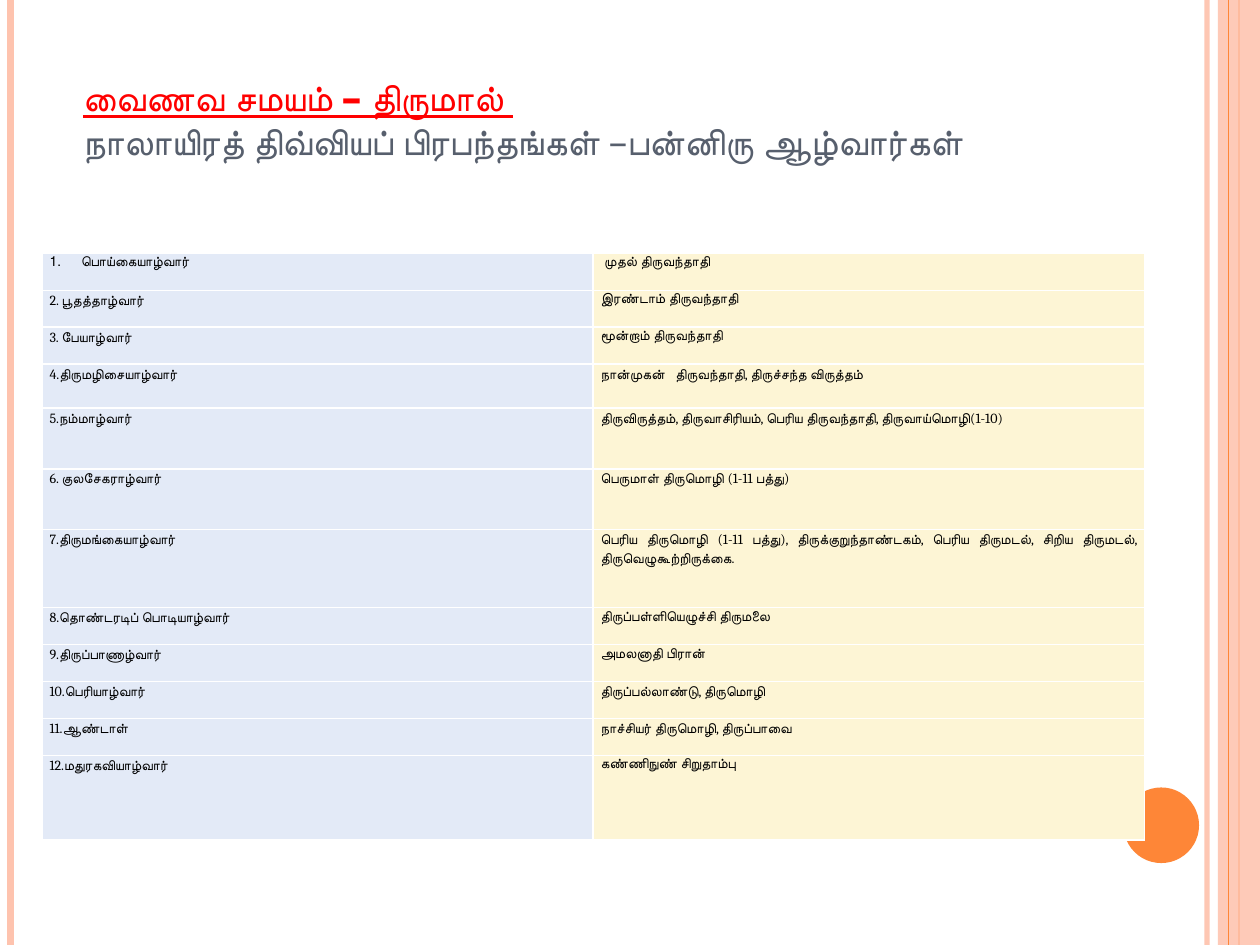
from pptx import Presentation
from pptx import util as u
from pptx.dml.color import RGBColor
from pptx.enum import shapes, text
from pptx.oxml.ns import qn
from lxml import etree

Pt = u.Pt
WIDTH, HEIGHT = 720, 540
ORANGE, PEACH, WHITE = "FE8637", "FEC3AE", "FFFFFF"

TITLE = "வைணவ சமயம் – திருமால் "
SUBTITLE = "நாலாயிரத் திவ்வியப் பிரபந்தங்கள் –பன்னிரு ஆழ்வார்கள்"

# Poet, works, row height
ROWS = [
    ("பொய்கையாழ்வார்", " முதல் திருவந்தாதி", 21.1),
    ("2. பூதத்தாழ்வார்", "இரண்டாம் திருவந்தாதி", 21.1),
    ("3. பேயாழ்வார்", "மூன்றாம் திருவந்தாதி", 21.1),
    ("4.திருமழிசையாழ்வார்", "நான்முகன்   திருவந்தாதி, திருச்சந்த விருத்தம்", 25.2),
    ("5.நம்மாழ்வார்", "திருவிருத்தம், திருவாசிரியம், பெரிய திருவந்தாதி, திருவாய்மொழி(1-10)", 34.7),
    ("6. குலசேகராழ்வார்", "பெருமாள் திருமொழி (1-11 பத்து)", 34.7),
    ("7.திருமங்கையாழ்வார்",
     "பெரிய திருமொழி (1-11 பத்து), திருக்குறுந்தாண்டகம், பெரிய திருமடல், "
     "சிறிய திருமடல், திருவெழுகூற்றிருக்கை.", 44.6),
    ("8.தொண்டரடிப் பொடியாழ்வார்", "திருப்பள்ளியெழுச்சி திருமலை", 21.1),
    ("9.திருப்பாணாழ்வார்", "அமலனாதி பிரான்", 21.1),
    ("10.பெரியாழ்வார்", "திருப்பல்லாண்டு, திருமொழி", 21.1),
    ("11.ஆண்டாள்", "நாச்சியர் திருமொழி, திருப்பாவை", 21.1),
    ("12.மதுரகவியாழ்வார்", "கண்ணிநுண் சிறுதாம்பு", 48.3),
]
COLUMN_FILLS = ["E3EAF7", "FDF5D5"]
COLUMN_WIDTH = 315


def color(value):
    return RGBColor.from_string(value)


def set_alpha(part, percent):
    for fill in part._element.spPr.iter(qn("a:srgbClr")):
        etree.SubElement(fill, qn("a:alpha"), val=str(percent * 1000))


def add_stripe(page, x, stroke, weight, alpha=100):
    line = page.shapes.add_connector(
        shapes.MSO_CONNECTOR.STRAIGHT, Pt(x), Pt(0), Pt(x), Pt(HEIGHT))
    line.line.color.rgb = color(stroke)
    line.line.width = Pt(weight)
    if alpha < 100:
        set_alpha(line, alpha)
    etree.SubElement(line._element.spPr, qn("a:effectLst"))


def add_filled(page, kind, left, top, width, height, fill, alpha=100):
    shape = page.shapes.add_shape(kind, Pt(left), Pt(top), Pt(width), Pt(height))
    shape.shadow.inherit = False
    shape.fill.solid()
    shape.fill.fore_color.rgb = color(fill)
    shape.line.fill.background()
    if alpha < 100:
        set_alpha(shape, alpha)


def add_title(page):
    box = page.shapes.add_textbox(Pt(40.3), Pt(30.2), Pt(568.8), Pt(66.2))
    box.text_frame.word_wrap = True
    box.text_frame.vertical_anchor = text.MSO_ANCHOR.BOTTOM
    para = box.text_frame.paragraphs[0]
    for words, ink, strong in ((TITLE, "FF0000", True), (SUBTITLE, "575F6D", False)):
        if para.runs:
            para.add_line_break()
        span = para.add_run()
        span.text = words
        span.font.name = "DejaVu Sans Mono"
        span.font.size = Pt(21)
        span.font.bold = span.font.underline = strong
        span.font.color.rgb = color(ink)


def add_borders(cell):
    props = cell._tc.get_or_add_tcPr()
    for index, side in enumerate(("lnL", "lnR", "lnT", "lnB")):
        edge = etree.Element(qn("a:" + side), w=str(Pt(1)))
        fill = etree.SubElement(edge, qn("a:solidFill"))
        etree.SubElement(fill, qn("a:srgbClr"), val=WHITE)
        props.insert(index, edge)


def fill_cell(cell, words, fill):
    cell.margin_left = cell.margin_right = Pt(4.3)
    cell.margin_top = cell.margin_bottom = Pt(0)
    cell.fill.solid()
    cell.fill.fore_color.rgb = color(fill)
    add_borders(cell)
    para = cell.text_frame.paragraphs[0]
    para.text = words
    para.alignment = text.PP_ALIGN.JUSTIFY
    para.line_spacing = 1.15
    para.space_after = Pt(10)
    para.font.name = "Cambria"
    para.font.size = Pt(8)
    para.font.color.rgb = color("000000")
    return para


def number_paragraph(para):
    props = para._p.get_or_add_pPr()
    props.set("marL", str(Pt(18)))
    props.set("indent", str(-Pt(18)))
    bullet = etree.Element(qn("a:buAutoNum"), type="arabicPeriod")
    props.find(qn("a:defRPr")).addprevious(bullet)


def add_poets(page):
    total = sum(height for _, _, height in ROWS)
    table = page.shapes.add_table(
        len(ROWS), 2, Pt(24), Pt(144.8), Pt(2 * COLUMN_WIDTH), Pt(total)).table
    table.first_row = table.horz_banding = False
    for column in table.columns:
        column.width = Pt(COLUMN_WIDTH)
    for r, (poet, works, height) in enumerate(ROWS):
        table.rows[r].height = Pt(height)
        for c, words in enumerate((poet, works)):
            para = fill_cell(table.cell(r, c), words, COLUMN_FILLS[c])
            if r == c == 0:
                number_paragraph(para)


def main():
    deck = Presentation()
    deck.slide_width, deck.slide_height = Pt(WIDTH), Pt(HEIGHT)
    page = deck.slides.add_slide(deck.slide_layouts[6])

    # Edge decoration, back to front
    add_stripe(page, 689.8, PEACH, 3, 93)
    add_stripe(page, 6, PEACH, 4.5)
    add_stripe(page, 708, ORANGE, 1.5)
    add_filled(page, shapes.MSO_SHAPE.RECTANGLE, 696, 0, 24, HEIGHT, PEACH, 87)
    add_stripe(page, 702, ORANGE, 0.75)
    add_filled(page, shapes.MSO_SHAPE.OVAL, 642, 450, 43.2, 43.2, ORANGE)

    # Content
    add_title(page)
    add_poets(page)
    deck.save("out.pptx")


if __name__ == "__main__":
    main()
